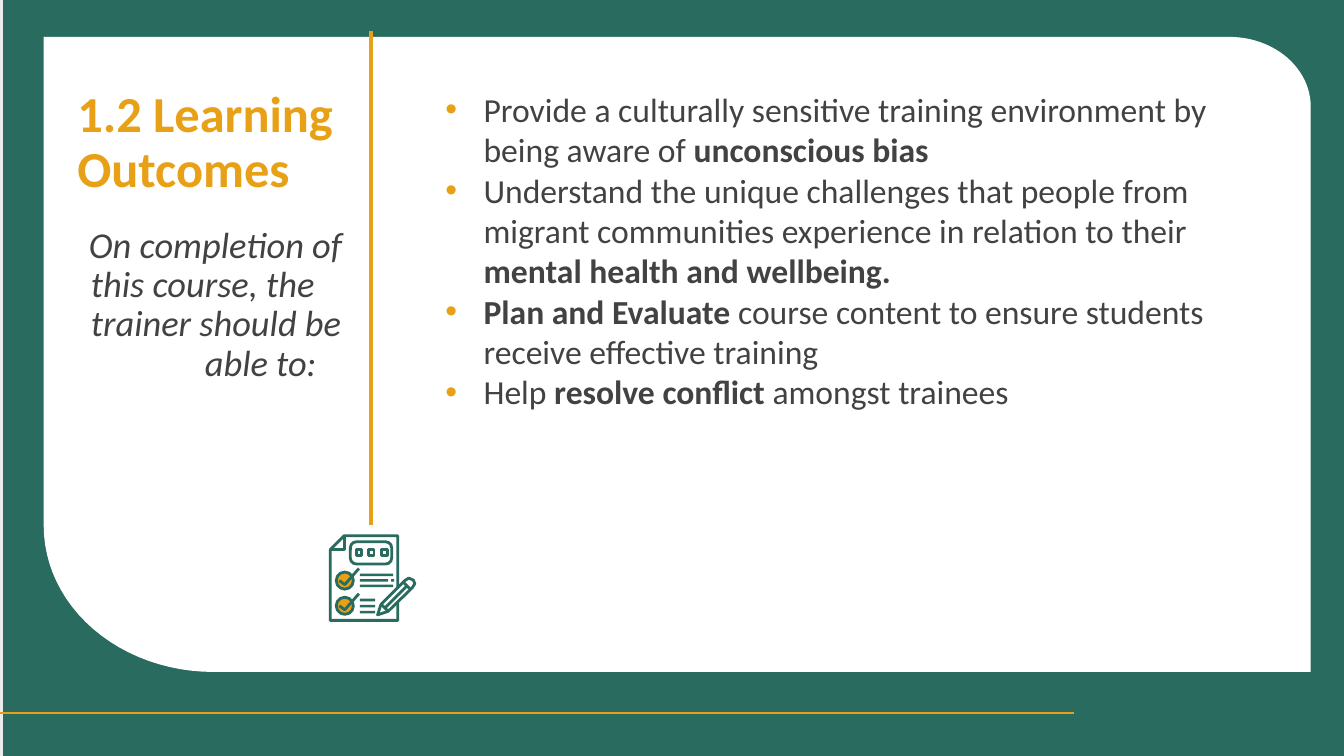
import math
from dataclasses import dataclass
from lxml import etree
from pptx import Presentation
from pptx import util as u
from pptx.dml.color import RGBColor
from pptx.enum import shapes, text
from pptx.oxml import ns

COLOURS = {"green": "296B5F", "gold": "E8A116", "white": "FFFFFF",
           "strip": "ECECEC", "grey": "424242"}
FORMATS = {
    "heading": {"name": "Calibri", "size": u.Pt(36), "bold": True},
    "lead": {"name": "Calibri", "size": u.Pt(26), "italic": True},
    "outcome": {"name": "Calibri", "size": u.Pt(24)},
}
FRAME = {"auto_size": text.MSO_AUTO_SIZE.NONE, "word_wrap": True,
         "vertical_anchor": text.MSO_ANCHOR.TOP}
OUTCOMES = [
    [("Provide a culturally sensitive training environment by being aware of ", False),
     ("unconscious bias", True)],
    [("Understand the unique challenges that people from migrant communities "
      "experience in relation to their ", False),
     ("mental health and wellbeing.", True)],
    [("Plan and Evaluate", True),
     (" course content to ensure students receive effective training", False)],
    [("Help", False), (" resolve conflict ", True), ("amongst trainees", False)],
]


@dataclass
class Grid:
    step: float
    left: float = 0
    top: float = 0

    def point(self, column, row):
        return u.Inches(self.left + column * self.step), u.Inches(self.top + row * self.step)

    def area(self, column, row, columns, rows):
        return (*self.point(column, row),
                u.Inches(columns * self.step), u.Inches(rows * self.step))


SLIDE = Grid(1 / 12)
ICON = Grid(0.01, 3.26, 5.3)


def colour(name):
    return RGBColor.from_string(COLOURS[name])


def set_all(target, values):
    for name, value in values.items():
        setattr(target, name, value)


def paint(shape, fill=None, line=None, width=2):
    shape.shadow.inherit = False
    if fill:
        shape.fill.solid()
        shape.fill.fore_color.rgb = colour(fill)
    else:
        shape.fill.background()
    if line:
        shape.line.color.rgb = colour(line)
        shape.line.width = u.Pt(width)
    else:
        shape.line.fill.background()


def add_preset(page, kind, grid, area, **look):
    shape = page.shapes.add_shape(kind, *grid.area(*area))
    paint(shape, **look)
    return shape


def add_outline(page, grid, points, close=True, **look):
    start, *rest = [grid.point(*point) for point in points]
    builder = page.shapes.build_freeform(*start)
    builder.add_line_segments(rest, close=close)
    paint(builder.convert_to_shape(), **look)


def add_rule(page, grid, start, end, name, width):
    rule = page.shapes.add_connector(shapes.MSO_CONNECTOR.STRAIGHT,
                                     *grid.point(*start), *grid.point(*end))
    rule.line.color.rgb = colour(name)
    rule.line.width = u.Pt(width)
    etree.SubElement(rule._element.spPr, ns.qn("a:effectLst"))


def arc(centre, radii, first_degree, steps=24):
    angles = [math.radians(first_degree + 90 * i / steps) for i in range(steps + 1)]
    return [(centre[0] + radii[0] * math.cos(angle),
             centre[1] + radii[1] * math.sin(angle)) for angle in angles]


def place(page, box, area):
    set_all(box, dict(zip(("left", "top", "width", "height"), SLIDE.area(*area))))
    set_all(box.text_frame, FRAME)
    page.shapes._spTree.append(box._element)


def add_span(para, words, style, name, **extra):
    span = para.add_run()
    span.text = words
    set_all(span.font, {**FORMATS[style], **extra})
    span.font.color.rgb = colour(name)


def set_indent(para, left, hang):
    properties = para._p.get_or_add_pPr()
    properties.set("marL", str(u.Inches(left)))
    properties.set("indent", str(-u.Inches(hang)))
    return properties


def add_bullet(para):
    properties = set_indent(para, 0.38, 0.38)
    tint = etree.SubElement(properties, ns.qn("a:buClr"))
    etree.SubElement(tint, ns.qn("a:srgbClr"), val=COLOURS["gold"])
    etree.SubElement(properties, ns.qn("a:buChar"), char="•")


def next_para(frame, index, spacing):
    para = frame.add_paragraph() if index else frame.paragraphs[0]
    set_all(para, {"alignment": text.PP_ALIGN.LEFT, "line_spacing": spacing,
                   "space_before": u.Pt(0)})
    return para


def draw_frame(page):
    page.background.fill.solid()
    page.background.fill.fore_color.rgb = colour("green")
    panel = [(5.2, 4.4), *arc((146.3, 12.7), (9.7, 8.3), -90),
             (156, 80), *arc((25.4, 62.6), (20.2, 17.4), 90)]
    add_outline(page, SLIDE, panel, fill="white")
    add_preset(page, shapes.MSO_SHAPE.RECTANGLE, SLIDE, (0, 0, 0.36, 90), fill="strip")
    add_rule(page, SLIDE, (0, 84.84), (127.8, 84.84), "gold", 1.5)
    add_rule(page, SLIDE, (44.16, 3.72), (44.16, 62.52), "gold", 2.75)


def write_heading(page):
    title = page.shapes.title
    place(page, title, (8, 10, 41.4, 10.6))
    add_span(next_para(title.text_frame, 0, 0.9), "1.2 Learning Outcomes", "heading", "gold")


def write_lead(page):
    box = page.shapes.add_textbox(*SLIDE.area(9.4, 26.4, 33.2, 25.6))
    set_all(box.text_frame, FRAME)
    lines = [("On completion of this course, the trainer should be", 0.02, 0.02),
             ("able to:", 1.15, 0)]
    for index, (words, left, hang) in enumerate(lines):
        para = next_para(box.text_frame, index, 0.9)
        set_indent(para, left, hang)
        add_span(para, words, "lead", "grey")


def write_outcomes(page):
    body = page.placeholders[1]
    place(page, body, (51.8, 10, 100, 67.3))
    for index, spans in enumerate(OUTCOMES):
        para = next_para(body.text_frame, index, 1.0)
        add_bullet(para)
        for words, bold in spans:
            add_span(para, words, "outcome", "grey", bold=bold)


def draw_checklist(page):
    kinds = shapes.MSO_SHAPE
    sheet = [(15.5, 1.5), (68.5, 1.5), (68.5, 85.5), (1.5, 85.5), (1.5, 15.5)]
    add_outline(page, ICON, sheet, line="green")
    add_outline(page, ICON, [(15.5, 1.5), (15.5, 15.5), (1.5, 15.5)], close=False, line="green")
    label = add_preset(page, kinds.ROUNDED_RECTANGLE, ICON, (21.5, 7.5, 41, 22), line="green")
    label.adjustments[0] = 0.27
    for column in (27.5, 39.5, 52.5):
        add_preset(page, kinds.RECTANGLE, ICON, (column, 15.5, 5.5, 5.5), line="green")
    for row in (46, 71):
        add_preset(page, kinds.OVAL, ICON, (16 - 8.5, row - 8.5, 17, 17),
                   fill="gold", line="green")
        tick = [(10.5, row), (16, row + 4), (30, row - 12)]
        add_outline(page, ICON, tick, close=False, line="green")
    bars = [(31, 39, 33), (31, 44.5, 28), (62, 44.5, 3), (31, 50, 33)]
    bars += [(31, 64 + 6 * i, 15) for i in range(3)]
    for column, row, columns in bars:
        add_preset(page, kinds.RECTANGLE, ICON, (column, row, columns, 2.6), fill="green")
    pencil = [(48.5, 80), (52, 69.5), (75.5, 46), (79.5, 43.5), (84, 45.5),
              (85.5, 49), (83, 53), (59, 76.5)]
    add_outline(page, ICON, pencil, fill="white", line="green")
    for start, end in [((52, 69.5), (59, 76.5)), ((74.5, 48), (80.5, 54)),
                       ((56, 73), (77, 52))]:
        add_rule(page, ICON, start, end, "green", 2)


def main():
    deck = Presentation()
    deck.slide_width, deck.slide_height = u.Inches(13.33), u.Inches(7.5)
    page = deck.slides.add_slide(deck.slide_layouts[1])
    draw_frame(page)
    write_outcomes(page)
    write_heading(page)
    write_lead(page)
    draw_checklist(page)
    deck.save("out.pptx")


if __name__ == "__main__":
    main()
